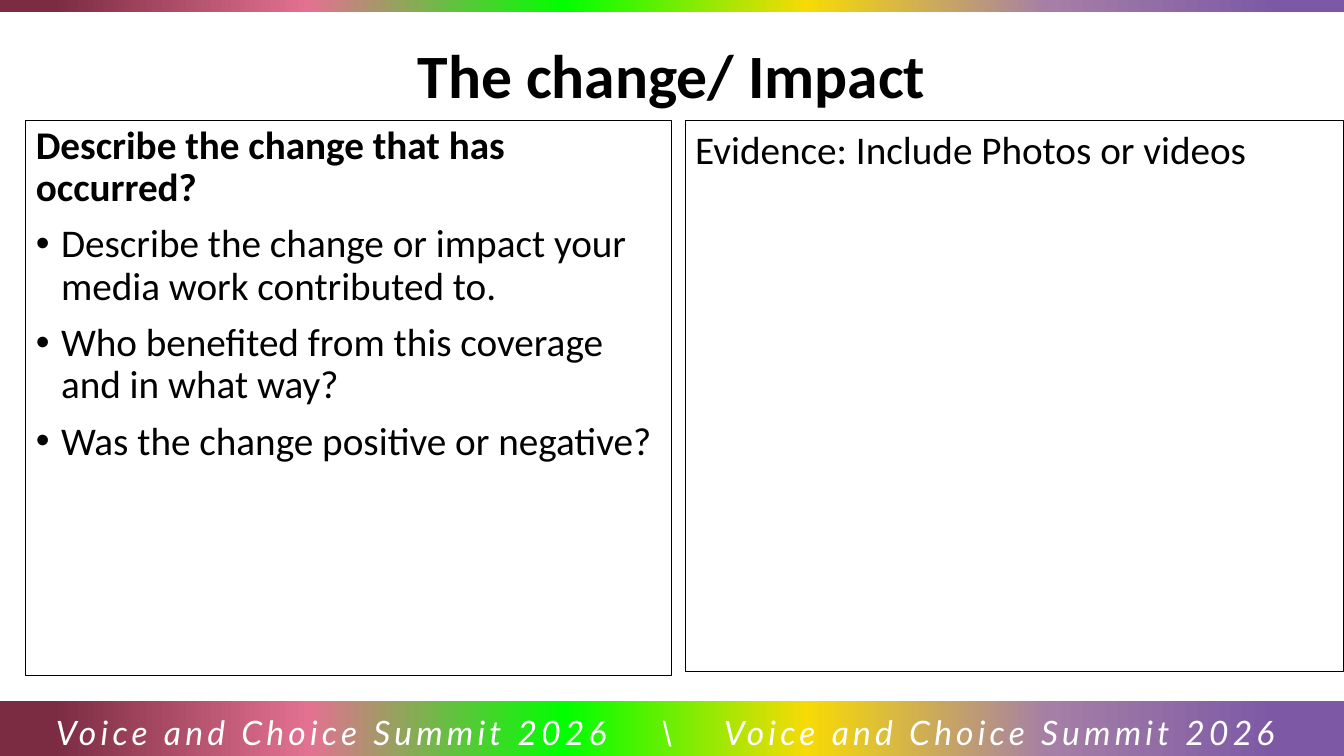
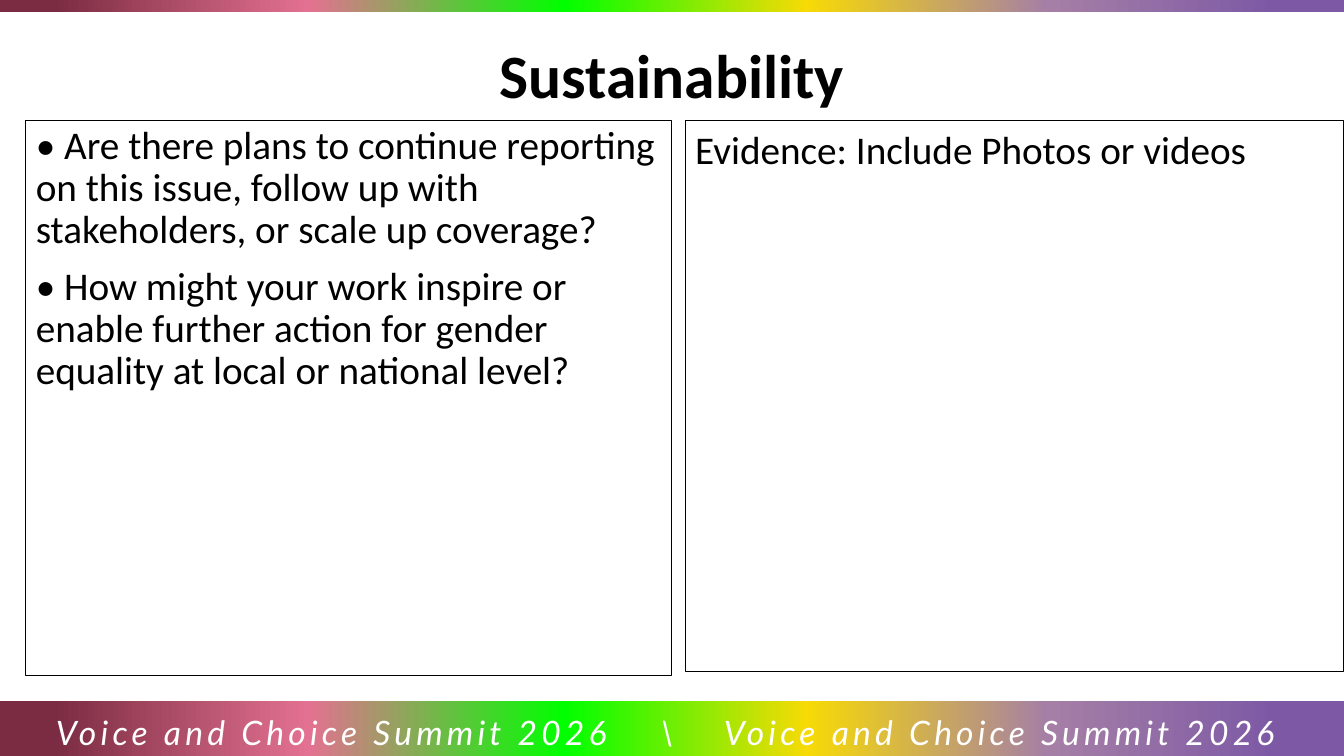
from lxml import etree
from pptx import Presentation
from pptx.dml.color import RGBColor
from pptx.enum.shapes import MSO_SHAPE
from pptx.enum.text import MSO_ANCHOR, PP_ALIGN
from pptx.oxml.ns import qn
from pptx.util import Pt

RECT = MSO_SHAPE.RECTANGLE
TOP, MIDDLE = MSO_ANCHOR.TOP, MSO_ANCHOR.MIDDLE
LEFT, CENTER = PP_ALIGN.LEFT, PP_ALIGN.CENTER

WIDTH, HEIGHT = 960, 540
COLORS = {
    "ink": "000000", "white": "FFFFFF",
    "violet": "7D59A5", "mauve": "A57FA6", "gold": "F7DA06",
    "green": "00FF00", "pink": "E37191", "wine": "7B2C42",
}
STOPS = {"violet": 5, "mauve": 22, "gold": 40, "green": 58, "pink": 77, "wine": 96}
BANDS = [(0, 8.5), (501, HEIGHT - 501)]
TITLE = {"name": "Calibri", "size": Pt(44), "bold": True}
HEAD = {"name": "Calibri", "size": Pt(28), "bold": True}
BODY = {"name": "Calibri", "size": Pt(28), "bold": False}
FOOT = {"name": "Lato", "size": Pt(24), "italic": True}
EVENT = "Voice and Choice Summit 2026"
TABS = [431.5, 477]
HANG = Pt(18)
PROOF = "Evidence: Include Photos or videos"

SLIDES = [
    ("The change/ Impact", [
        ("Describe the change that has occurred?", HEAD, False),
        ("Describe the change or impact your media work contributed to.", BODY, True),
        ("Who benefited from this coverage and in what way?", BODY, True),
        ("Was the change positive or negative?", BODY, True),
    ]),
    ("Sustainability", [
        ("• Are there plans to continue reporting on this issue, follow up with "
         "stakeholders, or scale up coverage?", BODY, False),
        ("• How might your work inspire or enable further action for gender "
         "equality at local or national level?", BODY, False),
    ]),
]


def write(par, text, style, color="ink", align=LEFT):
    par.alignment = align
    run = par.add_run()
    run.text = text
    for key, value in style.items():
        setattr(run.font, key, value)
    run.font.color.rgb = RGBColor.from_string(COLORS[color])
    return run


def panel(shapes, left, top, width, height):
    box = shapes.add_shape(RECT, Pt(left), Pt(top), Pt(width), Pt(height))
    box.shadow.inherit = False
    box.fill.background()
    box.line.color.rgb = RGBColor.from_string(COLORS["ink"])
    box.line.width = Pt(0.75)
    box.text_frame.word_wrap = True
    box.text_frame.vertical_anchor = TOP
    return box.text_frame


deck = Presentation()
deck.slide_width, deck.slide_height = Pt(WIDTH), Pt(HEIGHT)

for title, points in SLIDES:
    shapes = deck.slides.add_slide(deck.slide_layouts[6]).shapes

    for top, height in BANDS:
        band = shapes.add_shape(RECT, 0, Pt(top), Pt(WIDTH), Pt(height))
        band.shadow.inherit = False
        band.line.fill.background()
        band.fill.gradient()
        band.fill.gradient_angle = 180
        stops = band.element.find(".//" + qn("a:gsLst"))
        for old in list(stops):
            stops.remove(old)
        for name, place in STOPS.items():
            stop = etree.SubElement(stops, qn("a:gs"), pos=str(place * 1000))
            etree.SubElement(stop, qn("a:srgbClr"), val=COLORS[name])

    frame = shapes.add_textbox(0, Pt(19.5), Pt(WIDTH), Pt(66)).text_frame
    frame.word_wrap = True
    frame.vertical_anchor = MIDDLE
    write(frame.paragraphs[0], title, TITLE, align=CENTER)

    frame = panel(shapes, 489.5, 86, 470.5, 394)
    write(frame.paragraphs[0], PROOF, BODY)

    frame = panel(shapes, 18.5, 86, 461.5, 396.5)
    for index, (text, style, bullet) in enumerate(points):
        par = frame.add_paragraph() if index else frame.paragraphs[0]
        if bullet:
            props = par._p.get_or_add_pPr()
            props.set("marL", str(HANG))
            props.set("indent", str(-HANG))
            etree.SubElement(props, qn("a:buFont"), typeface="Arial")
            etree.SubElement(props, qn("a:buChar"), char="•")
        par.line_spacing = 0.9
        if index:
            par.space_before = Pt(10)
        write(par, text, style)

    frame = shapes.add_textbox(0, Pt(503), Pt(WIDTH), Pt(35.5)).text_frame
    frame.word_wrap = True
    frame.margin_left, frame.margin_right = Pt(40), 0
    par = frame.paragraphs[0]
    tabs = etree.SubElement(par._p.get_or_add_pPr(), qn("a:tabLst"))
    for place in TABS:
        etree.SubElement(tabs, qn("a:tab"), pos=str(Pt(place)), algn="l")
    par.line_spacing = 1.07
    run = write(par, "\t".join([EVENT, "\\", EVENT]), FOOT, "white")
    run.font._element.set("spc", "300")

deck.save("out.pptx")
